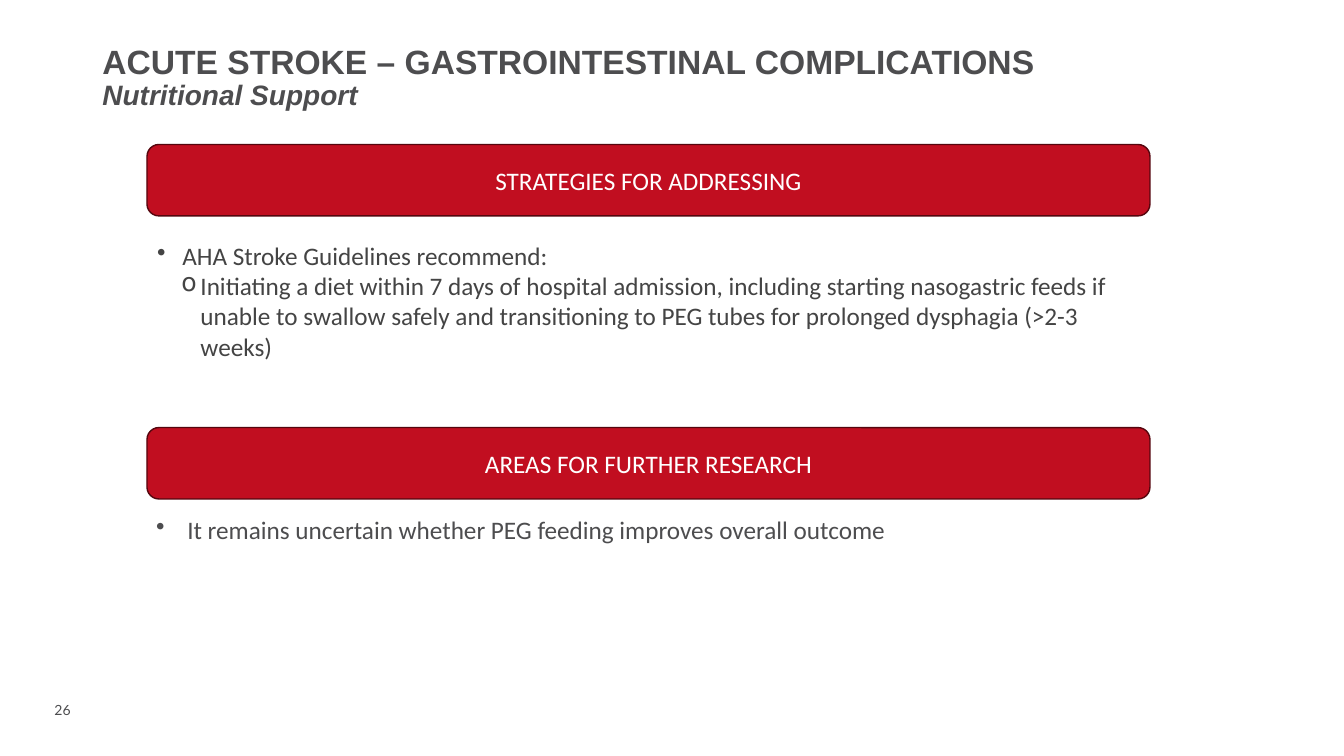
from lxml.etree import SubElement
from pptx import Presentation
from pptx.dml.color import RGBColor
from pptx.enum.shapes import MSO_SHAPE as Shape
from pptx.enum.text import MSO_ANCHOR as Anchor, PP_ALIGN as Align
from pptx.oxml.ns import qn
from pptx.util import Inches, Pt

COLORS = {"red": "C10E20", "edge": "55060E", "grey": "4D4D4F",
          "dark": "444444", "white": "FFFFFF"}
WIDTH, HEIGHT = Inches(13.33), Inches(7.5)
COL, ROW = WIDTH / 160, HEIGHT / 90

TITLE = [("ACUTE STROKE – GASTROINTESTINAL COMPLICATIONS", 24, False),
         ("Nutritional Support", 20, True)]
SECTIONS = [
    ("STRATEGIES FOR ADDRESSING", 10.8, 18, "dark", [
        ("•", 0.26, 0.25, 1.0, "AHA Stroke Guidelines recommend:"),
        ("o", 0.44, 0.19, 1.0,
         "Initiating a diet within 7 days of hospital admission, including "
         "starting nasogastric feeds if unable to swallow safely and "
         "transitioning to PEG tubes for prolonged dysphagia (>2-3 weeks)"),
    ]),
    ("AREAS FOR FURTHER RESEARCH", 10.1, 19.7, "grey", [
        ("•", 0.31, 0.31, 0.9,
         "It remains uncertain whether PEG feeding improves overall outcome"),
    ]),
]


def rgb(name):
    """Return the named colour."""
    return RGBColor.from_string(COLORS[name])


def grid(x, y, w, h):
    """Turn grid columns and rows into slide lengths."""
    return round(x * COL), round(y * ROW), round(w * COL), round(h * ROW)


def write(p, text, size, color, name="Calibri", bold=None, italic=None):
    """Set a paragraph's text and format its run."""
    p.text = text
    font = p.runs[0].font
    font.name, font.size, font.bold, font.italic = name, Pt(size), bold, italic
    font.color.rgb = rgb(color)


def add_paragraphs(tf, count):
    """Return the first paragraph and as many new ones as needed."""
    return [tf.paragraphs[0]] + [tf.add_paragraph() for _ in range(count - 1)]


def add_bullet(p, char, indent, hang):
    """Give a paragraph a bullet with a hanging indent in inches."""
    pPr = p._p.get_or_add_pPr()
    pPr.set("marL", str(Inches(indent)))
    pPr.set("indent", str(-Inches(hang)))
    SubElement(pPr, qn("a:buChar")).set("char", char)


def add_title(s, x, y, w, h):
    """Place the two-line title at the bottom of its box."""
    tf = s.shapes.add_textbox(*grid(x, y, w, h)).text_frame
    tf.word_wrap, tf.vertical_anchor = True, Anchor.BOTTOM
    for p, (text, size, italic) in zip(add_paragraphs(tf, len(TITLE)), TITLE):
        write(p, text, size, "grey", "Arial", True, italic)
        p.line_spacing = 0.9


def add_banner(s, x, y, w, h, heading):
    """Draw a red rounded banner with a centred heading."""
    sp = s.shapes.add_shape(Shape.FLOWCHART_ALTERNATE_PROCESS, *grid(x, y, w, h))
    sp.shadow.inherit = False
    sp.fill.solid()
    sp.fill.fore_color.rgb = rgb("red")
    sp.line.color.rgb = rgb("edge")
    sp.line.width = Pt(1)
    tf = sp.text_frame
    tf.vertical_anchor = Anchor.MIDDLE
    p = tf.paragraphs[0]
    write(p, heading, 18, "white")
    p.alignment = Align.CENTER


def add_section(s, x, y, w, section):
    """Place a banner and the bulleted text below it."""
    heading, drop, height, color, items = section
    add_banner(s, x, y, w, 8.5, heading)
    tf = s.shapes.add_textbox(*grid(x - 0.1, y + drop, w, height)).text_frame
    tf.word_wrap = True
    for p, item in zip(add_paragraphs(tf, len(items)), items):
        char, indent, hang, spacing, text = item
        add_bullet(p, char, indent, hang)
        write(p, text, 18, color)
        p.line_spacing = spacing


def add_page_number(s, x, y, w, h, number):
    """Place the page number."""
    tf = s.shapes.add_textbox(*grid(x, y, w, h)).text_frame
    tf.word_wrap = False
    write(tf.paragraphs[0], number, 10, "grey", "Lato")


def main():
    """Build and save the slide."""
    prs = Presentation()
    prs.slide_width, prs.slide_height = WIDTH, HEIGHT
    s = prs.slides.add_slide(prs.slide_layouts[6])
    add_title(s, 11, 4.7, 138, 9.2)
    for i, section in enumerate(SECTIONS):
        add_section(s, 17.5, 17.2 + 33.7 * i, 119.4, section)
    add_page_number(s, 5.3, 82.9, 4.7, 3.2, "26")
    prs.save("out.pptx")


if __name__ == "__main__":
    main()
